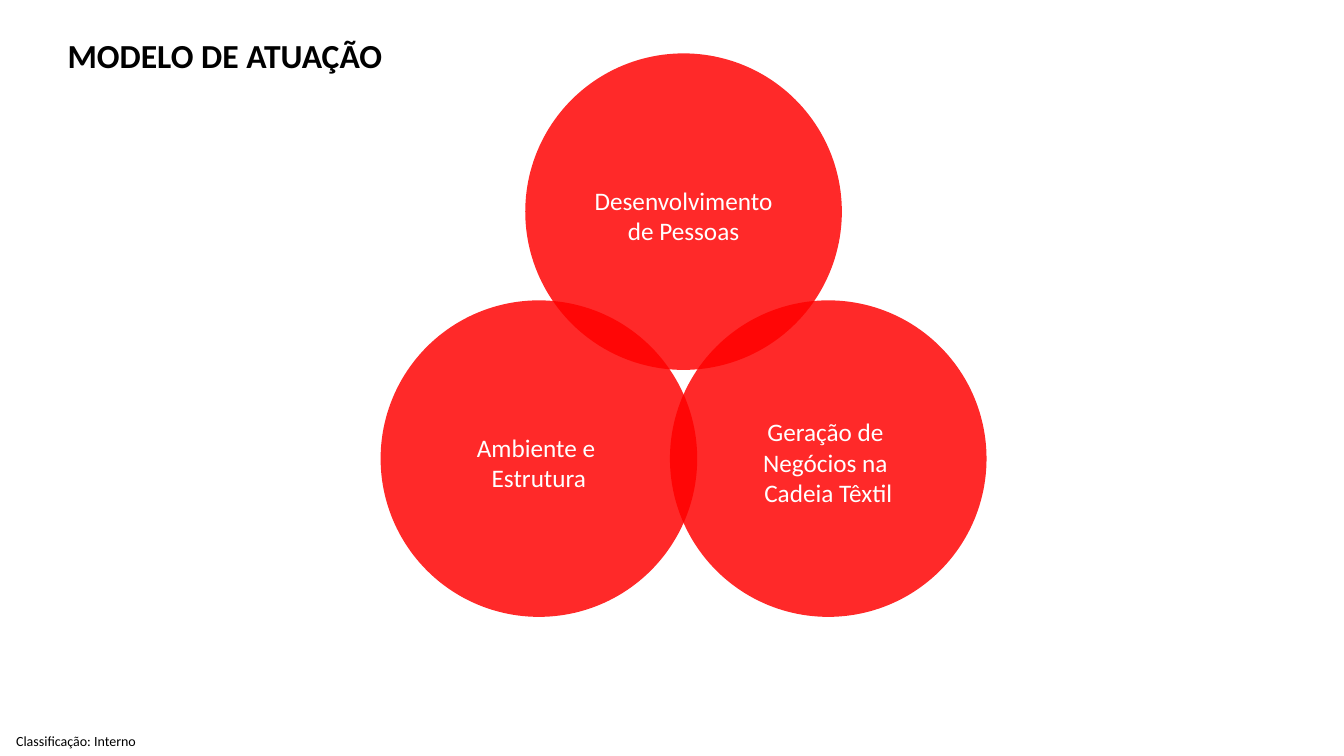
"""Build a slide with three overlapping circles that show the operating model."""
from dataclasses import dataclass

from lxml import etree
from pptx import Presentation
from pptx import util as u
from pptx.dml.color import RGBColor
from pptx.enum import shapes, text
from pptx.oxml import ns

TITLE = "MODELO DE ATUAÇÃO"
FOOTER = "Classificação: Interno"
PILLARS = [
    {"column": -1, "row": 1, "width": 2.7, "lines": 2, "paragraphs": ["Ambiente e ", "Estrutura"]},
    {"column": 0, "row": 0, "width": 2.13, "lines": 2, "paragraphs": ["Desenvolvimento de Pessoas"]},
    {"column": 1, "row": 1, "width": 2.51, "lines": 3,
     "paragraphs": ["Geração de \nNegócios na \nCadeia Têxtil"]},
]

SLIDE_WIDTH, SLIDE_HEIGHT = 13.33, 7.5
CENTER_X, TOP_Y = 6.78, 2.1
COLUMN_STEP, ROW_STEP = 1.435, 2.45
DIAMETER = 3.14
LINE_HEIGHT, LABEL_PADDING, LABEL_DROP = 0.3, 0.11, 0.04


@dataclass(frozen=True)
class Theme:
    """Hold the colours, font and type sizes."""
    font: str = "Calibri"
    circle: str = "FF0000"
    circle_alpha: int = 84
    dark: str = "000000"
    light: str = "FFFFFF"
    title: int = 24
    label: int = 18
    footer: int = 10


THEME = Theme()


def write(shape, paragraphs, *, size, color, bold=False, align=text.PP_ALIGN.LEFT,
          anchor=text.MSO_ANCHOR.TOP, margins=(0.1, 0.05, 0.1, 0.05)):
    """Fill a shape with formatted paragraphs."""
    frame = shape.text_frame
    frame.word_wrap = True
    frame.auto_size = text.MSO_AUTO_SIZE.NONE
    frame.vertical_anchor = anchor
    (frame.margin_left, frame.margin_top,
     frame.margin_right, frame.margin_bottom) = map(u.Inches, margins)
    for index, content in enumerate(paragraphs):
        paragraph = frame.add_paragraph() if index else frame.paragraphs[0]
        paragraph.text = content
        paragraph.alignment = align
        for run in paragraph.runs:
            run.font.name = THEME.font
            run.font.size = u.Pt(size)
            run.font.bold = bold
            run.font.color.rgb = RGBColor.from_string(color)


def centered_box(x, y, width, height):
    """Return the position and size of a box around a center."""
    return [u.Inches(value) for value in (x - width / 2, y - height / 2, width, height)]


def pillar_center(pillar):
    """Return the center of a pillar's circle."""
    return CENTER_X + pillar["column"] * COLUMN_STEP, TOP_Y + pillar["row"] * ROW_STEP


def add_circle(slide, pillar):
    """Draw one translucent circle."""
    box = centered_box(*pillar_center(pillar), DIAMETER, DIAMETER)
    circle = slide.shapes.add_shape(shapes.MSO_SHAPE.OVAL, *box)
    circle.shadow.inherit = False
    circle.line.fill.background()
    circle.fill.solid()
    circle.fill.fore_color.rgb = RGBColor.from_string(THEME.circle)
    color = circle.fill._xPr.find(".//" + ns.qn("a:srgbClr"))
    etree.SubElement(color, ns.qn("a:alpha"), val=str(THEME.circle_alpha * 1000))


def add_label(slide, pillar):
    """Write one pillar's name over its circle."""
    x, y = pillar_center(pillar)
    height = pillar["lines"] * LINE_HEIGHT + LABEL_PADDING
    label = slide.shapes.add_textbox(*centered_box(x, y + LABEL_DROP, pillar["width"], height))
    write(label, pillar["paragraphs"], size=THEME.label, color=THEME.light,
          align=text.PP_ALIGN.CENTER)


def main():
    """Build and save the slide."""
    presentation = Presentation()
    presentation.slide_width = u.Inches(SLIDE_WIDTH)
    presentation.slide_height = u.Inches(SLIDE_HEIGHT)
    slide = presentation.slides.add_slide(presentation.slide_layouts[5])

    title = slide.shapes.title
    title.left, title.top, title.width, title.height = map(u.Inches, (0.57, 0.3, 4.54, 0.5))
    write(title, [TITLE], size=THEME.title, color=THEME.dark, bold=True)

    footer = slide.shapes.add_textbox(*map(u.Inches, (0, 7.21, 1.52, 0.29)))
    write(footer, [FOOTER], size=THEME.footer, color=THEME.dark,
          anchor=text.MSO_ANCHOR.MIDDLE, margins=(0.16, 0, 0, 0))

    for pillar in PILLARS:
        add_circle(slide, pillar)
    for pillar in PILLARS:
        add_label(slide, pillar)
    presentation.save("out.pptx")


if __name__ == "__main__":
    main()
